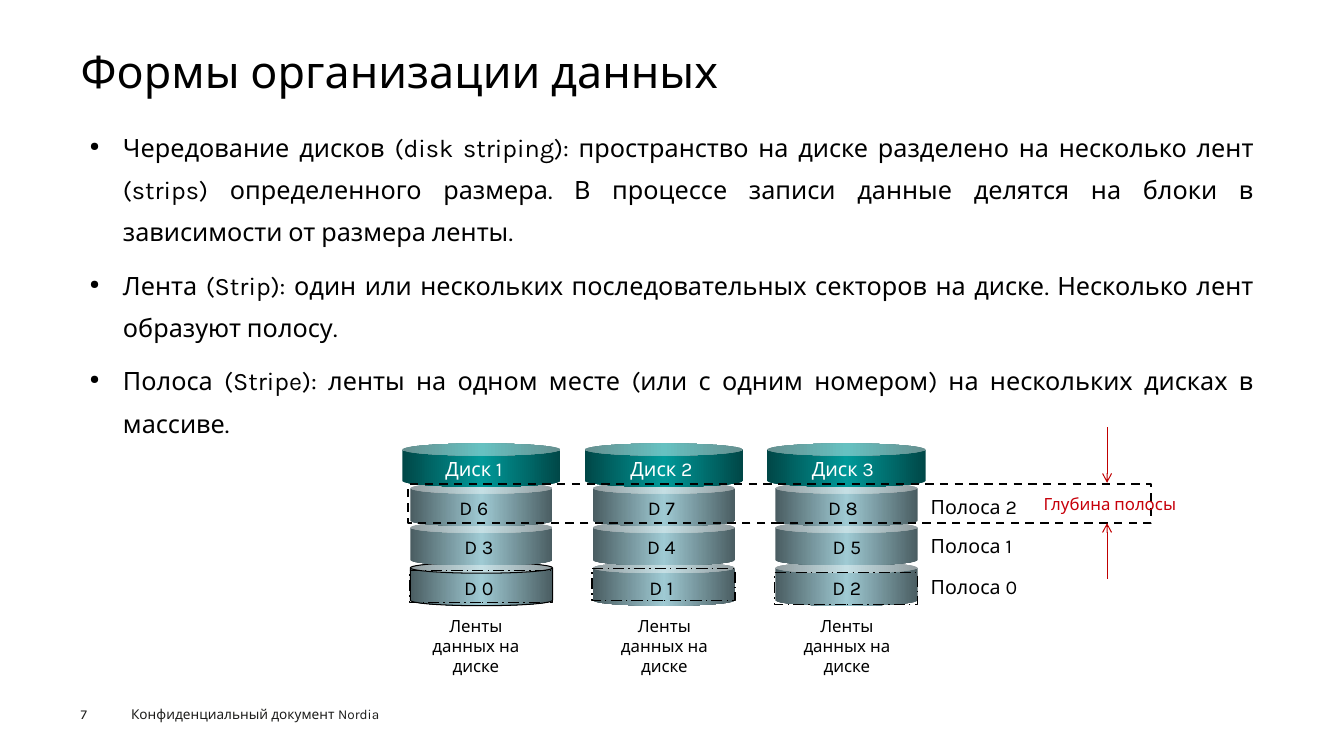
import copy
import pptx
import pptx.util
import pptx.dml.color
import pptx.enum.dml
import pptx.enum.shapes
import pptx.enum.text
import pptx.oxml
import pptx.oxml.ns

Inches = pptx.util.Inches
Pt = pptx.util.Pt
RGB = pptx.dml.color.RGBColor.from_string
Align = pptx.enum.text.PP_ALIGN
Shape = pptx.enum.shapes.MSO_SHAPE
Dash = pptx.enum.dml.MSO_LINE
qn = pptx.oxml.ns.qn
decl = pptx.oxml.ns.nsdecls("a")

theme = {
    "font": "Karla",
    "ink": "000000", "foot": "1D1D1B", "white": "FFFFFF",
    "arrow": "C00000", "depth": "C7000B",
    "strip": ("4A5D62", "9FCAD3", "4A5D62"),
    "cap": ("004747", "009999", "004747"),
    "title": 32, "body": 18, "label": 14, "note": 12, "small": 9.7,
}

deck = pptx.Presentation()
deck.slide_width, deck.slide_height = Inches(13.33), Inches(7.5)
slide = deck.slides.add_slide(deck.slide_layouts[6])
shapes = slide.shapes


def write(lines, left, top, width, height, size, color="ink",
          align=Align.LEFT, pad=(0.09, 0.04), wrap=True):
    box = shapes.add_textbox(Inches(left), Inches(top), Inches(width), Inches(height))
    frame = box.text_frame
    frame.word_wrap = wrap
    frame.margin_left = frame.margin_right = Inches(pad[0])
    frame.margin_top = frame.margin_bottom = Inches(pad[1])
    frame.text = "\n".join(lines)
    for para in frame.paragraphs:
        para.alignment = align
        para.font.name = theme["font"]
        para.font.size = Pt(theme[size])
        para.font.color.rgb = RGB(theme[color])
    return frame


def draw(kind, left, top, width, height, tones=None, line=None, dash=None):
    shape = shapes.add_shape(kind, Inches(left), Inches(top), Inches(width), Inches(height))
    shape.shadow.inherit = False
    if tones:
        shape.fill.gradient()
        shape.fill.gradient_angle = 0
        stops = shape._element.spPr.find(".//" + qn("a:gsLst"))
        stops.insert(1, copy.deepcopy(stops[0]))
        for stop, spot, tone in zip(shape.fill.gradient_stops, (0, 0.5, 1), theme[tones]):
            stop.position = spot
            stop.color.rgb = RGB(tone)
    else:
        shape.fill.background()
    if line:
        shape.line.color.rgb = RGB(theme["ink"])
        shape.line.width = Pt(line)
        shape.line.dash_style = dash
    else:
        shape.line.fill.background()
    return shape


write(["Конфиденциальный документ Nordia"], 1.21, 6.96, 2.86, 0.26, "small", "foot")
write(["7"], 0.8, 7, 0.55, 0.16, "small", "foot", pad=(0, 0))
title = write(["Формы организации данных"], 0.8, 0.49, 11.73, 0.54, "title", pad=(0, 0))
title.paragraphs[0].line_spacing = 0.9

body = write([
    "Чередование дисков (disk striping): пространство на диске разделено на несколько лент (strips) определенного размера. В процессе записи данные делятся на блоки в зависимости от размера ленты.",
    "Лента (Strip): один или нескольких последовательных секторов на диске. Несколько лент образуют полосу.",
    "Полоса (Stripe): ленты на одном месте (или с одним номером) на нескольких дисках в массиве.",
], 0.8, 1.15, 11.73, 5.33, "body", align=Align.JUSTIFY)
for index, para in enumerate(body.paragraphs):
    para.line_spacing = 1.4
    if index:
        para.space_before = Pt(7.9)
    props = para._p.get_or_add_pPr()
    props.set("marL", str(Inches(0.33)))
    props.set("indent", str(-Inches(0.33)))
    font = props.find(qn("a:defRPr"))
    for tag, key, value in (("a:buSzPct", "val", "50000"), ("a:buChar", "char", "●")):
        mark = pptx.oxml.parse_xml(f"<{tag} {decl}/>")
        mark.set(key, value)
        font.addprevious(mark)

tops = (4.79, 5.18, 5.58)
disks = (
    (4.7, 4.75, 4.72, 5.66),
    (6.56, 6.56, 6.59, 5.64),
    (8.36, 8.4, 8.4, 5.68),
)
for disk, (upper, lower, foot, edge) in enumerate(disks):
    left = 4.07 + 1.81 * disk
    for row in (2, 1, 0):
        line = 0.75 if disk == 0 and row == 2 else None
        draw(Shape.CAN, left, tops[row], 1.41, 0.43, "strip", line)
    for row, top in enumerate(tops):
        mid = lower if row else upper
        write([f"D {6 - 3 * row + disk}"], mid - 0.32, top + 0.09, 0.64, 0.34,
              "label", align=Align.CENTER, wrap=False)
    cap = draw(Shape.CAN, left - 0.08, 4.4, 1.57, 0.43, "cap")
    cap.adjustments[0] = 0.28
    write([f"Диск {disk + 1}"], upper - 0.44, 4.49, 0.88, 0.37, "label", "white",
          Align.CENTER, wrap=False)
    draw(Shape.RECTANGLE, left - 0.01, edge, 1.42, 0.32, None, 1, Dash.LONG_DASH_DOT)
    write(["Ленты данных на диске"], foot - 0.63, 6.07, 1.26, 0.68, "note",
          align=Align.CENTER)

draw(Shape.RECTANGLE, 4.05, 4.8, 7.37, 0.39, None, 1.5, Dash.DASH)
for row, top in enumerate(tops):
    write([f"Полоса {2 - row}"], 9.14, top + 0.08, 1.12, 0.33, "label")

for start, end in ((4.24, 4.79), (5.74, 5.19)):
    arrow = shapes.add_connector(pptx.enum.shapes.MSO_CONNECTOR.STRAIGHT,
                                 Inches(10.98), Inches(start), Inches(10.98), Inches(end))
    arrow.line.color.rgb = RGB(theme["arrow"])
    arrow.line.width = Pt(0.75)
    props = arrow._element.spPr
    head = pptx.oxml.parse_xml(f'<a:tailEnd {decl} type="arrow"/>')
    props.find(qn("a:ln")).append(head)
    props.append(pptx.oxml.parse_xml(f"<a:effectLst {decl}/>"))
write(["Глубина полосы"], 10.26, 4.86, 1.56, 0.29, "note", "depth")

deck.save("out.pptx")
